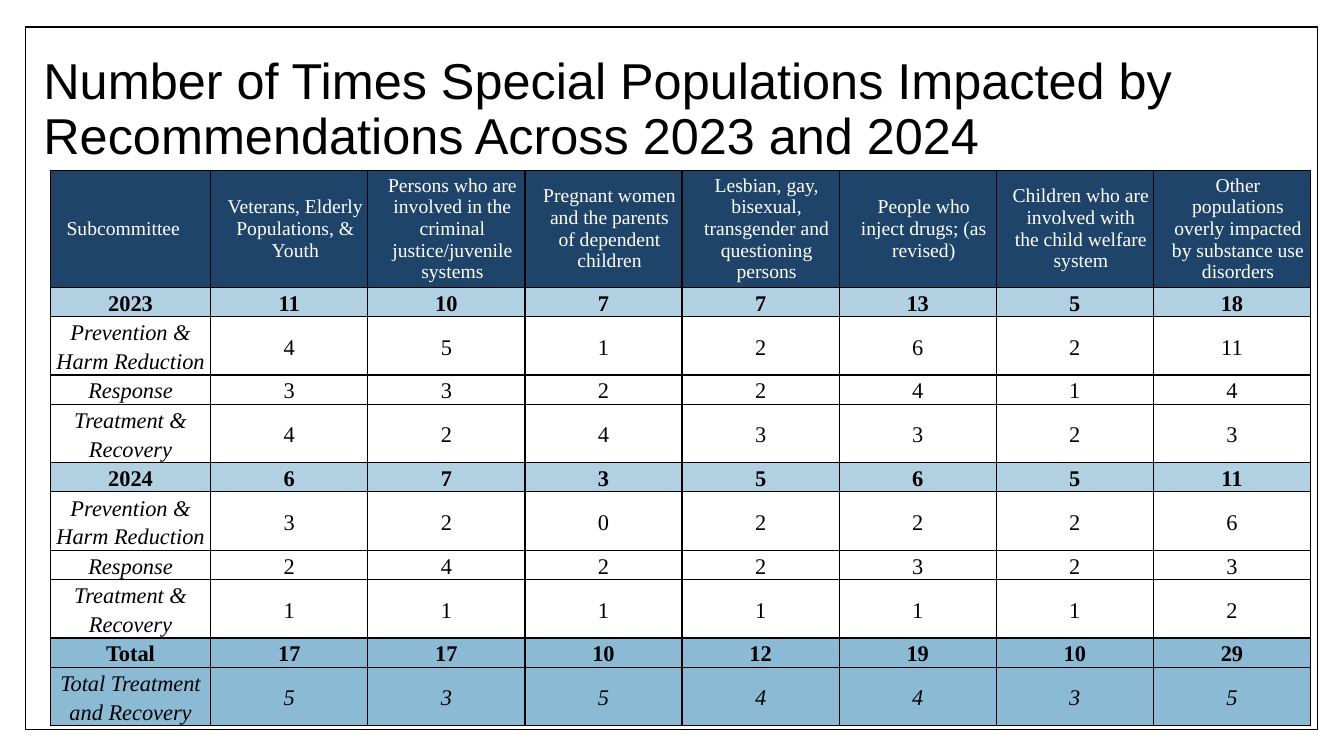
import dataclasses

import lxml.etree
import pptx
import pptx.dml.color
import pptx.enum.shapes
import pptx.enum.text
import pptx.oxml.ns
import pptx.util

Inches = pptx.util.Inches
Align = pptx.enum.text.PP_ALIGN
Anchor = pptx.enum.text.MSO_ANCHOR


@dataclasses.dataclass(frozen=True)
class Theme:
    black: str = "000000"
    white: str = "FFFFFF"
    header_fill: str = "1E446A"
    year_fill: str = "B1D1E3"
    total_fill: str = "8ABAD4"
    title_font: str = "Arial"
    table_font: str = "Times New Roman"
    title_size: int = 36
    header_size: int = 14
    body_size: int = 16
    line_width: int = 1


@dataclasses.dataclass(frozen=True)
class Box:
    left: float
    top: float
    width: float
    height: float

    def lengths(self):
        return [Inches(side) for side in dataclasses.astuple(self)]


@dataclasses.dataclass(frozen=True)
class RowStyle:
    fill: str
    height: float
    bold: bool = False
    italic_label: bool = False
    italic_values: bool = False


THEME = Theme()
TITLE = "Number of Times Special Populations Impacted by Recommendations Across 2023 and 2024"
LABEL_WIDTH = 1.59
HEADER_HEIGHT, SINGLE, DOUBLE = 1.16, 0.29, 0.58

HEADERS = [
    "Subcommittee",
    "Veterans, Elderly Populations, & Youth",
    "Persons who are involved in the criminal justice/juvenile systems",
    "Pregnant women and the parents of dependent\nchildren",
    "Lesbian, gay, bisexual, transgender and questioning persons",
    "People who inject drugs; (as revised)",
    "Children who are involved with the child welfare system",
    "Other populations overly impacted by substance use disorders",
]

YEAR = RowStyle(THEME.year_fill, SINGLE, bold=True)
SHORT = RowStyle(THEME.white, SINGLE, italic_label=True)
TALL = RowStyle(THEME.white, DOUBLE, italic_label=True)
TOTAL = RowStyle(THEME.total_fill, SINGLE, bold=True)
SUBTOTAL = RowStyle(THEME.total_fill, DOUBLE, italic_label=True, italic_values=True)

ROWS = [
    (YEAR, "2023", [11, 10, 7, 7, 13, 5, 18]),
    (TALL, "Prevention & Harm Reduction", [4, 5, 1, 2, 6, 2, 11]),
    (SHORT, "Response", [3, 3, 2, 2, 4, 1, 4]),
    (TALL, "Treatment & Recovery", [4, 2, 4, 3, 3, 2, 3]),
    (YEAR, "2024", [6, 7, 3, 5, 6, 5, 11]),
    (TALL, "Prevention & Harm Reduction", [3, 2, 0, 2, 2, 2, 6]),
    (SHORT, "Response", [2, 4, 2, 2, 3, 2, 3]),
    (TALL, "Treatment & Recovery", [1, 1, 1, 1, 1, 1, 2]),
    (TOTAL, "Total", [17, 17, 10, 12, 19, 10, 29]),
    (SUBTOTAL, "Total Treatment and Recovery", [5, 3, 5, 4, 4, 3, 5]),
]


def color(code):
    return pptx.dml.color.RGBColor.from_string(code)


def format_para(para, font, size, code, align, spacing=1.0, bold=False, italic=False):
    para.alignment = align
    para.line_spacing = spacing
    for span in para.runs:
        span.font.name = font
        span.font.size = pptx.util.Pt(size)
        span.font.color.rgb = color(code)
        span.font.bold = bold
        span.font.italic = italic


def add_frame(page, box):
    frame = page.shapes.add_shape(pptx.enum.shapes.MSO_SHAPE.RECTANGLE, *box.lengths())
    frame.shadow.inherit = False
    frame.fill.solid()
    frame.fill.fore_color.rgb = color(THEME.white)
    frame.line.color.rgb = color(THEME.black)
    frame.line.width = pptx.util.Pt(THEME.line_width)
    # Send the frame behind the title
    frame.element.getparent().insert(2, frame.element)


def fill_title(page, box):
    title = page.shapes.title
    title.left, title.top, title.width, title.height = box.lengths()
    text_frame = title.text_frame
    text_frame.text = TITLE
    text_frame.word_wrap = True
    text_frame.auto_size = pptx.enum.text.MSO_AUTO_SIZE.NONE
    text_frame.vertical_anchor = Anchor.MIDDLE
    format_para(text_frame.paragraphs[0], THEME.title_font, THEME.title_size,
                THEME.black, Align.LEFT, spacing=0.9)


def add_borders(cell):
    qn = pptx.oxml.ns.qn
    properties = cell._tc.get_or_add_tcPr()
    for side in ("a:lnL", "a:lnR", "a:lnT", "a:lnB"):
        line = lxml.etree.SubElement(properties, qn(side), w=str(pptx.util.Pt(THEME.line_width)))
        solid = lxml.etree.SubElement(line, qn("a:solidFill"))
        lxml.etree.SubElement(solid, qn("a:srgbClr"), val=THEME.black)


def set_cell(cell, text, fill):
    cell.text = text
    cell.vertical_anchor = Anchor.MIDDLE
    cell.margin_left = cell.margin_right = Inches(0.04)
    cell.margin_top = cell.margin_bottom = 0
    # Borders come before the fill in the cell properties
    add_borders(cell)
    cell.fill.solid()
    cell.fill.fore_color.rgb = color(fill)
    return cell.text_frame.paragraphs


def add_counts_table(page, box):
    table = page.shapes.add_table(len(ROWS) + 1, len(HEADERS), *box.lengths()).table
    table.horz_banding = False
    value_width = (box.width - LABEL_WIDTH) / (len(HEADERS) - 1)
    for index, column in enumerate(table.columns):
        column.width = Inches(value_width if index else LABEL_WIDTH)

    # Header row
    table.rows[0].height = Inches(HEADER_HEIGHT)
    for index, text in enumerate(HEADERS):
        for para in set_cell(table.cell(0, index), text, THEME.header_fill):
            format_para(para, THEME.table_font, THEME.header_size, THEME.white,
                        Align.CENTER if index else Align.LEFT)
            indents = para._p.get_or_add_pPr()
            indents.set("marL", str(Inches(0.12)))
            indents.set("indent", "0")

    # Counts by year and subcommittee
    for row, (style, label, values) in enumerate(ROWS, start=1):
        table.rows[row].height = Inches(style.height)
        for index, content in enumerate([label, *values]):
            para = set_cell(table.cell(row, index), str(content), style.fill)[0]
            format_para(para, THEME.table_font, THEME.body_size, THEME.black, Align.CENTER,
                        spacing=1.15, bold=style.bold,
                        italic=style.italic_values if index else style.italic_label)


def main():
    deck = pptx.Presentation()
    deck.slide_width, deck.slide_height = Inches(13.33), Inches(7.5)
    page = deck.slides.add_slide(deck.slide_layouts.get_by_name("Title Only"))
    add_frame(page, Box(0.25, 0.27, 12.82, 6.97))
    fill_title(page, Box(0.33, 0.36, 12.69, 1.48))
    add_counts_table(page, Box(0.5, 1.69, 12.5, 5.51))
    deck.save("out.pptx")


if __name__ == "__main__":
    main()
